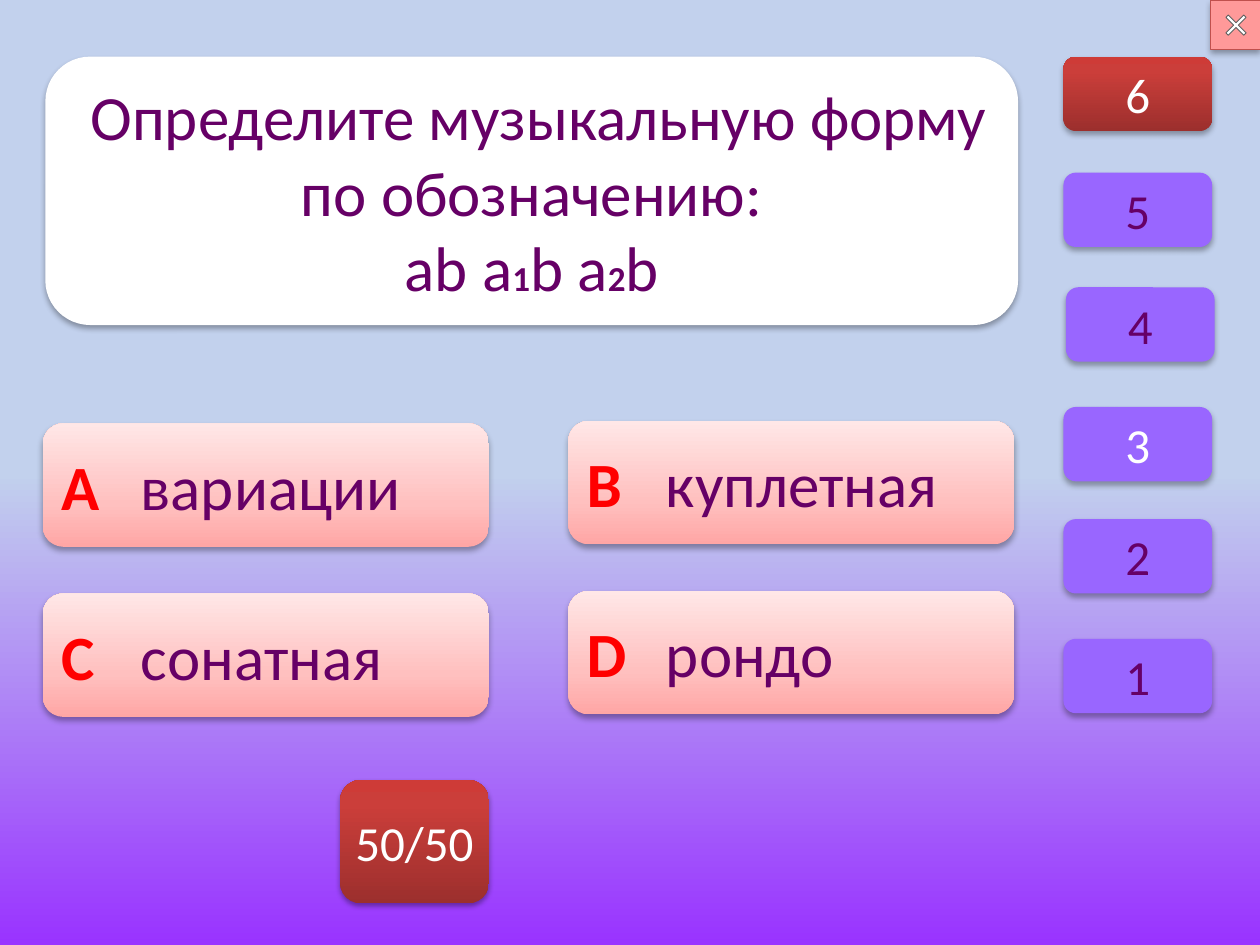
from copy import deepcopy
from dataclasses import dataclass

from lxml.etree import SubElement
from pptx import Presentation
from pptx.dml.color import RGBColor
from pptx.enum.shapes import MSO_SHAPE as Preset
from pptx.enum.text import MSO_ANCHOR as Anchor, PP_ALIGN as Align
from pptx.oxml.ns import qn
from pptx.util import Inches, Pt


@dataclass(frozen=True)
class Theme:
    font: str = "Calibri"
    plum: str = "660066"
    red: str = "FF0000"
    white: str = "FFFFFF"
    violet: str = "9966FF"
    close: str = "FF9999"
    close_edge: str = "C0504D"
    cross_edge: str = "5F5F5F"
    shadow: str = "000000"
    sky: tuple = ((0, "9933FF"), (0.5, "C2D1ED"))
    rose: tuple = ((0, "FFA6A5"), (0.35, "FFC0BF"), (1, "FFE7E7"))
    brick: tuple = ((0, "9C2F2D"), (0.8, "CB3E3A"), (1, "CE3B37"))
    text_size: int = 36
    button_size: int = 28
    index_size: int = 20


class QuizSlide:
    def __init__(self, slide, theme):
        self.slide = slide
        self.theme = theme
        self.paint(slide.background.fill, slide._element, theme.sky)

    def paint(self, fill, owner, paint):
        if paint is None:
            fill.background()
        elif isinstance(paint, str):
            fill.solid()
            fill.fore_color.rgb = RGBColor.from_string(paint)
        else:
            fill.gradient()
            fill.gradient_angle = 90
            stop_list = next(owner.iter(qn("a:gsLst")))
            while len(stop_list) < len(paint):
                stop_list.append(deepcopy(stop_list[0]))
            for stop, (position, colour) in zip(fill.gradient_stops, paint):
                stop.position = position
                stop.color.rgb = RGBColor.from_string(colour)

    def figure(self, preset, box, paint, edge=None):
        figure = self.slide.shapes.add_shape(preset, *map(Inches, box))
        self.paint(figure.fill, figure._element, paint)
        self.paint(figure.line.fill, figure._element, edge)
        if edge:
            figure.line.width = Pt(0.5)
        figure.shadow.inherit = False
        return figure

    def cast_shadow(self, figure, blur=3.5, distance=2.2, opacity=32):
        effects = figure._element.spPr.find(qn("a:effectLst"))
        outer = SubElement(effects, qn("a:outerShdw"), blurRad=str(Pt(blur)),
                           dist=str(Pt(distance)), dir="5400000", rotWithShape="0")
        colour = SubElement(outer, qn("a:srgbClr"), val=self.theme.shadow)
        SubElement(colour, qn("a:alpha"), val=str(opacity * 1000))

    def card(self, box, paint, wrap, **shadow):
        card = self.figure(Preset.ROUNDED_RECTANGLE, box, paint)
        self.cast_shadow(card, **shadow)
        frame = card.text_frame
        frame.word_wrap = wrap
        frame.vertical_anchor = Anchor.MIDDLE
        return frame

    def add_words(self, paragraph, wording, size, colour, bold=False):
        run = paragraph.add_run()
        run.text = wording
        run.font.name = self.theme.font
        run.font.size = Pt(size)
        run.font.bold = bold
        run.font.color.rgb = RGBColor.from_string(colour)

    def question(self, box, wording, formula):
        theme = self.theme
        frame = self.card(box, theme.white, True)
        prompt, notation = frame.paragraphs[0], frame.add_paragraph()
        prompt.alignment = notation.alignment = Align.CENTER
        self.add_words(prompt, wording, theme.text_size, theme.plum)
        for part in formula:
            is_index = part.isdigit()
            size = theme.index_size if is_index else theme.text_size
            self.add_words(notation, part, size, theme.plum, is_index)

    def answer(self, box, letter, wording):
        theme = self.theme
        line = self.card(box, theme.rose, True).paragraphs[0]
        line.alignment = Align.LEFT
        tabs = SubElement(line._p.get_or_add_pPr(), qn("a:tabLst"))
        SubElement(tabs, qn("a:tab"), pos=str(Inches(0.63)), algn="l")
        self.add_words(line, letter + "\t", theme.text_size, theme.red, True)
        self.add_words(line, wording, theme.text_size, theme.plum)

    def button(self, box, label, paint, colour, **shadow):
        line = self.card(box, paint, False, **shadow).paragraphs[0]
        line.alignment = Align.CENTER
        self.add_words(line, label, self.theme.button_size, colour)

    def close_button(self, left, top, side):
        theme = self.theme
        box = (left, top, side, side)
        self.cast_shadow(self.figure(Preset.ACTION_BUTTON_CUSTOM, box, theme.close))
        cross = self.figure(Preset.CROSS, (left + 0.1, top + 0.1, 0.2, 0.2),
                            theme.white, theme.cross_edge)
        cross.rotation = 45
        cross.adjustments[0] = 0.435
        self.figure(Preset.ACTION_BUTTON_CUSTOM, box, None, theme.close_edge)


def main():
    deck = Presentation()
    deck.slide_width, deck.slide_height = Inches(10), Inches(7.5)
    theme = Theme()
    quiz = QuizSlide(deck.slides.add_slide(deck.slide_layouts[6]), theme)

    quiz.close_button(9.61, 0, 0.39)
    quiz.question((0.36, 0.45, 7.72, 2.13),
                  " Определите музыкальную форму по обозначению:",
                  ("ab a", "1", "b a", "2", "b"))

    answers = (("А", "вариации"), ("В", "куплетная"),
               ("C", "сонатная"), ("D", "рондо"))
    columns = ((0.34, 3.36), (4.51, 3.34))
    for index, (letter, wording) in enumerate(answers):
        row, column = divmod(index, 2)
        left, top = columns[column]
        quiz.answer((left, top + row * 1.35, 3.54, 0.98), letter, wording)

    quiz.button((2.7, 6.19, 1.18, 0.98), "50/50", theme.brick, theme.white,
                blur=3.1, distance=1.8, opacity=35)

    levels = (
        ("6", 8.44, 0.45, theme.brick, theme.white),
        ("5", 8.44, 1.37, theme.violet, theme.plum),
        ("4", 8.46, 2.28, theme.violet, theme.plum),
        ("3", 8.44, 3.23, theme.violet, theme.white),
        ("2", 8.44, 4.12, theme.violet, theme.plum),
        ("1", 8.44, 5.07, theme.violet, theme.plum),
    )
    for level, left, top, paint, colour in levels:
        quiz.button((left, top, 1.18, 0.59), level, paint, colour)

    deck.save("out.pptx")


if __name__ == "__main__":
    main()
